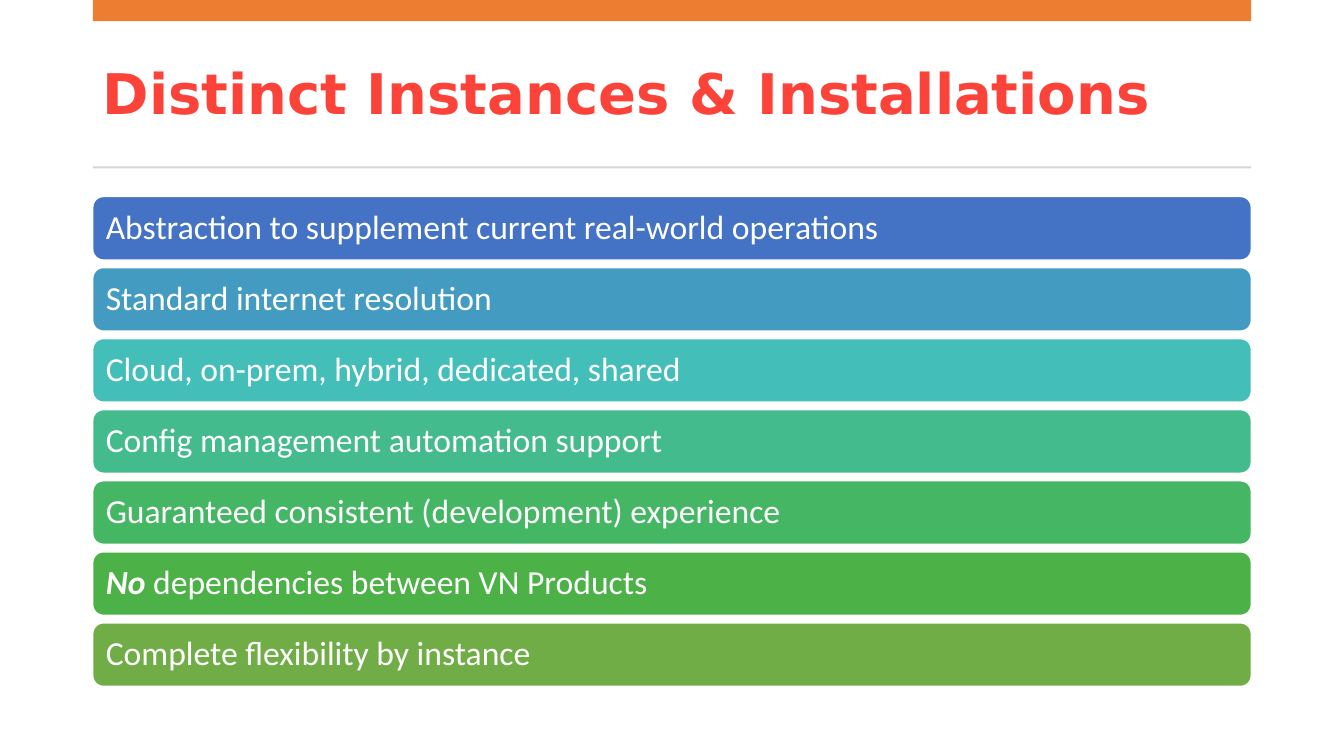
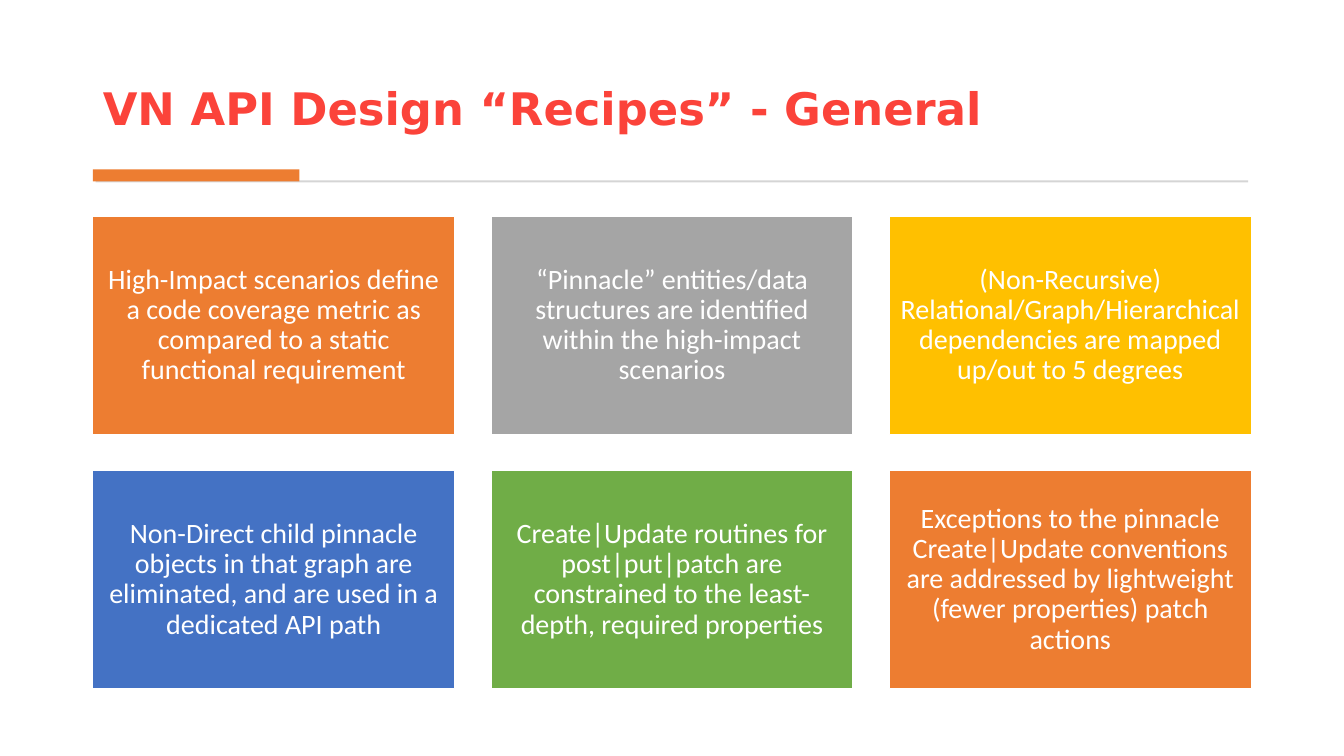
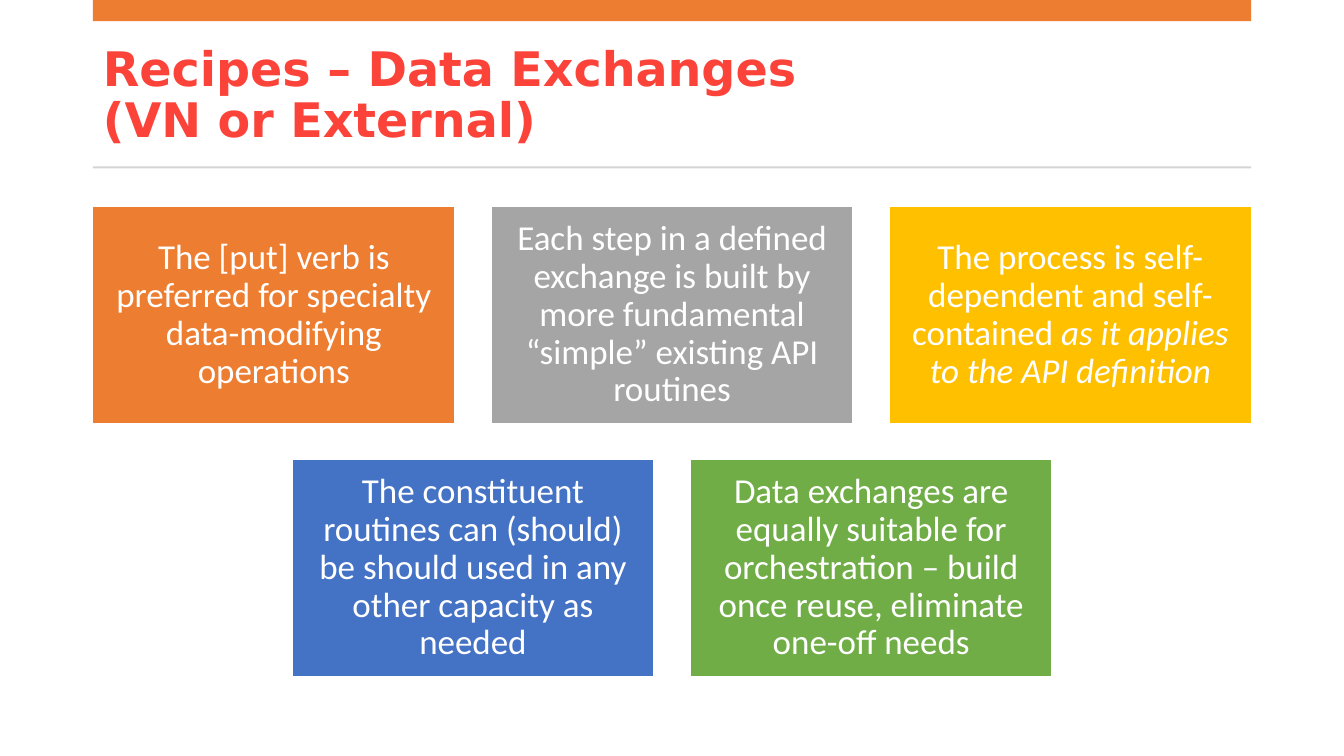
from pptx import Presentation
from pptx.dml.color import RGBColor
from pptx.enum import shapes, text
from pptx.util import Inches, Pt

ORANGE, GRAY, GOLD, BLUE, GREEN = "ED7D31", "A5A5A5", "FFC000", "4472C4", "70AD47"
WHITE, RED, RULE_GRAY = "FFFFFF", "FB433A", "D5D5D5"
BODY_FONT, TITLE_FONT = "Calibri", "DejaVu Sans"
MARGIN, CONTENT_W = 0.92, 11.49
CARD_COLORS = [ORANGE, GRAY, GOLD, BLUE, GREEN]


def rgb(hex_color):
    return RGBColor.from_string(hex_color)


def write(frame, content, size, font=BODY_FONT, color=WHITE, bold=False,
          align=text.PP_ALIGN.LEFT, anchor=text.MSO_ANCHOR.MIDDLE, inset=None):
    """Write one paragraph; content is a string or (text, bold, italic) runs."""
    frame.word_wrap = True
    frame.auto_size = text.MSO_AUTO_SIZE.NONE
    frame.vertical_anchor = anchor
    if inset is not None:
        frame.margin_left = frame.margin_right = Inches(inset)
        frame.margin_top = frame.margin_bottom = Inches(inset)
    paragraph = frame.paragraphs[0]
    paragraph.alignment = align
    paragraph.line_spacing = 0.9
    runs = [(content, bold, False)] if isinstance(content, str) else content
    for words, run_bold, run_italic in runs:
        for index, line in enumerate(words.split("\n")):
            if index:
                paragraph.add_line_break()
            run = paragraph.add_run()
            run.text = line
            run.font.name, run.font.size = font, Pt(size)
            run.font.bold, run.font.italic = run_bold, run_italic
            run.font.color.rgb = rgb(color)


def block(slide, box, fill, outline=None, kind=shapes.MSO_SHAPE.RECTANGLE):
    shape = slide.shapes.add_shape(kind, *map(Inches, box))
    shape.shadow.inherit = False
    shape.fill.solid()
    shape.fill.fore_color.rgb = rgb(fill)
    if outline:
        shape.line.color.rgb = rgb(outline)
        shape.line.width = Pt(1)
    else:
        shape.line.fill.background()
    return shape


def titled_slide(prs, title, size, box, anchor=text.MSO_ANCHOR.MIDDLE):
    slide = prs.slides.add_slide(prs.slide_layouts[5])
    heading = slide.shapes.title
    heading.left, heading.top, heading.width, heading.height = map(Inches, box)
    write(heading.text_frame, title, size, font=TITLE_FONT, color=RED,
          bold=True, anchor=anchor)
    return slide


def top_band_slide(prs, title, size):
    """Title between a band on the top edge and a thin rule."""
    slide = titled_slide(prs, title, size, (MARGIN, 0.37, CONTENT_W, 1.18))
    block(slide, (MARGIN, 0, CONTENT_W, 0.21), ORANGE)
    block(slide, (MARGIN, 1.65, CONTENT_W, 0.02), RULE_GRAY)
    return slide


def tab_rule_slide(prs, title, size):
    """Title above a thin rule that starts with a short tab."""
    slide = titled_slide(prs, title, size, (MARGIN, 0.28, CONTENT_W, 1.11),
                         text.MSO_ANCHOR.BOTTOM)
    block(slide, (0.95, 1.79, 11.43, 0.02), RULE_GRAY)
    block(slide, (MARGIN, 1.68, 2.05, 0.12), ORANGE)
    return slide


def stacked_bars(slide, box, bars, bar_h=0.63):
    """Rounded bars spread evenly down the box."""
    left, top, width, height = box
    step = (height - bar_h) / (len(bars) - 1)
    for index, (fill, content) in enumerate(bars):
        bar = block(slide, (left, top + index * step, width, bar_h), fill,
                    WHITE, shapes.MSO_SHAPE.ROUNDED_RECTANGLE)
        write(bar.text_frame, content, 24, inset=0.1)


def card_grid(slide, box, cards, size, inset, columns=3, gap=0.36):
    """Cards in rows, with a short last row centred."""
    left, top, width, height = box
    rows = [cards[i:i + columns] for i in range(0, len(cards), columns)]
    card_w = (width - gap * (columns - 1)) / columns
    card_h = (height - gap * (len(rows) - 1)) / len(rows)
    for row, row_cards in enumerate(rows):
        indent = (columns - len(row_cards)) * (card_w + gap) / 2
        for column, content in enumerate(row_cards):
            fill = CARD_COLORS[(row * columns + column) % len(CARD_COLORS)]
            card = block(slide, (left + indent + column * (card_w + gap),
                                 top + row * (card_h + gap), card_w, card_h),
                         fill, WHITE)
            write(card.text_frame, content, size, inset=inset,
                  align=text.PP_ALIGN.CENTER)


def main():
    prs = Presentation()
    prs.slide_width, prs.slide_height = Inches(13.33), Inches(7.5)

    # Instances and installations
    instances = top_band_slide(prs, "Distinct Instances & Installations", 40)
    stacked_bars(instances, (MARGIN, 1.95, CONTENT_W, 4.86), [
        (BLUE, "Abstraction to supplement current real-world operations"),
        ("449BC1", "Standard internet resolution"),
        ("43BEB9", "Cloud, on-prem, hybrid, dedicated, shared"),
        ("43BB8D", "Config management automation support"),
        ("45B664", "Guaranteed consistent (development) experience"),
        ("4CB146", [("No", True, True),
                    (" dependencies between VN Products", False, False)]),
        (GREEN, "Complete flexibility by instance"),
    ])

    # General recipes
    general = tab_rule_slide(prs, "VN API Design “Recipes” - General", 32)
    card_grid(general, (MARGIN, 2.15, CONTENT_W, 4.68), [
        "High-Impact scenarios define a code coverage metric as compared to "
        "a static functional requirement",
        "“Pinnacle” entities/data structures are identified within the "
        "high-impact scenarios",
        "(Non-Recursive) Relational/Graph/Hierarchical dependencies are "
        "mapped up/out to 5 degrees",
        "Non-Direct child pinnacle objects in that graph are eliminated, and "
        "are used in a dedicated API path",
        "Create|Update routines for post|put|patch are constrained to the "
        "least-depth, required properties",
        "Exceptions to the pinnacle Create|Update conventions are addressed "
        "by lightweight (fewer properties) patch actions",
    ], size=20, inset=0.08)

    # Data exchange recipes
    exchanges = top_band_slide(
        prs, "Recipes – Data Exchanges\n(VN or External)", 34)
    card_grid(exchanges, (MARGIN, 2.05, CONTENT_W, 4.66), [
        "The [put] verb is preferred for specialty data-modifying operations",
        "Each step in a defined exchange is built by more fundamental "
        "“simple” existing API routines",
        [("The process is self-dependent and self-contained ", False, False),
         ("as it applies to the API definition", False, True)],
        "The constituent routines can (should) be should used in any other "
        "capacity as needed",
        "Data exchanges are equally suitable for orchestration – build once "
        "reuse, eliminate one-off needs",
    ], size=25, inset=0.1)

    prs.save("out.pptx")


if __name__ == "__main__":
    main()
